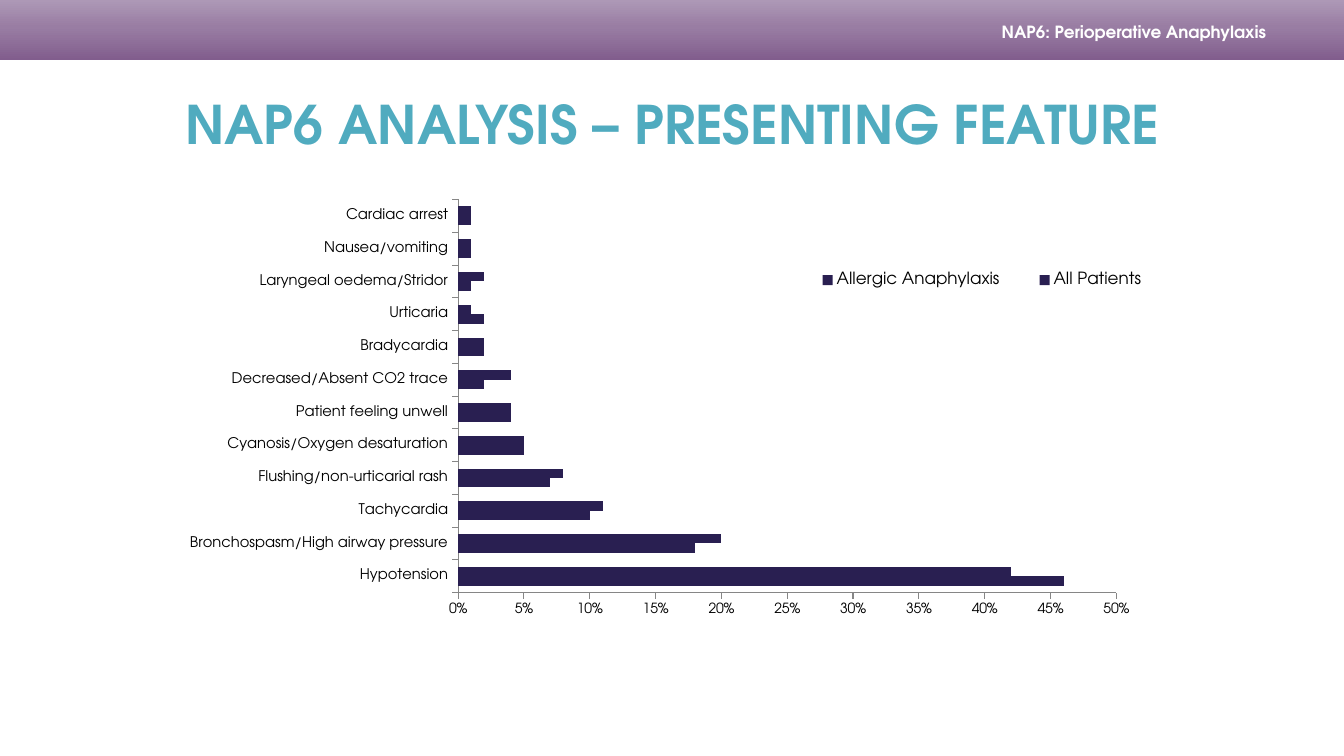
"""Build the NAP6 slide on the presenting features of anaphylaxis."""
from copy import deepcopy

from lxml import etree
from pptx import Presentation
from pptx.chart.data import CategoryChartData
from pptx.dml.color import RGBColor
from pptx.enum.chart import XL_CHART_TYPE, XL_LEGEND_POSITION, XL_TICK_MARK
from pptx.enum.shapes import MSO_SHAPE
from pptx.enum.text import MSO_ANCHOR, MSO_AUTO_SIZE, PP_ALIGN
from pptx.oxml.ns import qn
from pptx.util import Inches, Pt

BARS = XL_CHART_TYPE.BAR_CLUSTERED
SIDE = XL_LEGEND_POSITION.RIGHT
OUT, NONE = XL_TICK_MARK.OUTSIDE, XL_TICK_MARK.NONE
RECT = MSO_SHAPE.RECTANGLE
MID = MSO_ANCHOR.MIDDLE
FIXED = MSO_AUTO_SIZE.NONE
RIGHT, CENTER = PP_ALIGN.RIGHT, PP_ALIGN.CENTER

THEME = {
    "face": "TeX Gyre Adventor",
    "band": [(0, "815D8D"), (0.55, "997DA3"), (1, "AD98B6")],
    "bar": "291F51",
    "axis": "868686",
    "head": {"size": 12, "color": "FFFFFF", "bold": True},
    "title": {"size": 38, "color": "50ABBF", "bold": True},
    "chart": {"size": 10, "color": "000000", "bold": False},
    "label": {"size": 10.5, "color": "000000", "bold": False},
    "key": {"size": 12, "color": "000000", "bold": False},
}

ROWS = [
    ("Hypotension", 0.46, 0.42),
    ("Bronchospasm/High airway pressure", 0.18, 0.2),
    ("Tachycardia", 0.1, 0.11),
    ("Flushing/non-urticarial rash", 0.07, 0.08),
    ("Cyanosis/Oxygen desaturation", 0.05, 0.05),
    ("Patient feeling unwell", 0.04, 0.04),
    ("Decreased/Absent CO2 trace", 0.02, 0.04),
    ("Bradycardia", 0.02, 0.02),
    ("Urticaria", 0.02, 0.01),
    ("Laryngeal oedema/Stridor", 0.01, 0.02),
    ("Nausea/vomiting", 0.01, 0.01),
    ("Cardiac arrest", 0.01, 0.01),
]


def style(font, role):
    look = THEME[role]
    values = {"name": THEME["face"], "size": Pt(look["size"]), "bold": look["bold"]}
    for key, value in values.items():
        setattr(font, key, value)
    font.color.rgb = RGBColor.from_string(look["color"])


def place(part, index, marks):
    for old in part.findall(qn("c:layout")):
        part.remove(old)
    layout = etree.Element(qn("c:layout"))
    manual = etree.SubElement(layout, qn("c:manualLayout"))
    for tag, value in marks.items():
        etree.SubElement(manual, qn("c:" + tag)).set("val", str(value))
    part.insert(index, layout)


deck = Presentation()
deck.slide_width, deck.slide_height = Inches(13.33), Inches(7.5)
slide = deck.slides.add_slide(deck.slide_layouts[5])

band = slide.shapes.add_shape(RECT, 0, 0, deck.slide_width, Inches(0.6))
band.shadow.inherit = False
band.line.fill.background()
band.fill.gradient()
band.fill.gradient_angle = 90
first = next(band._element.iter(qn("a:gs")))
first.addnext(deepcopy(first))
for stop, (spot, color) in zip(band.fill.gradient_stops, THEME["band"]):
    stop.position = spot
    stop.color.rgb = RGBColor.from_string(color)

head = slide.shapes.add_textbox(Inches(8.35), Inches(0.18), Inches(4.45), Inches(0.28))
title = slide.shapes.title
title.left, title.top = Inches(0.67), Inches(0.6)
title.width, title.height = Inches(12), Inches(1.25)
for box, role, words, align in (
    (head, "head", "NAP6: Perioperative Anaphylaxis", RIGHT),
    (title, "title", "NAP6 ANALYSIS – PRESENTING FEATURE", CENTER),
):
    frame = box.text_frame
    frame.text = words
    for key, value in {"word_wrap": True, "auto_size": FIXED, "vertical_anchor": MID}.items():
        setattr(frame, key, value)
    frame.paragraphs[0].alignment = align
    style(frame.paragraphs[0].runs[0].font, role)
head.text_frame.margin_right = Inches(0.24)

names, every, proven = zip(*ROWS)
data = CategoryChartData(number_format="0%")
data.categories = names
data.add_series("All Patients", every)
data.add_series("Allergic Anaphylaxis", proven)
chart = slide.shapes.add_chart(
    BARS, Inches(0.62), Inches(1.85), Inches(12), Inches(4.32), data
).chart
style(chart.font, "chart")
chart.has_title = False

plot = chart.plots[0]
for key, value in {"gap_width": 150, "overlap": 0, "vary_by_categories": False}.items():
    setattr(plot, key, value)
for series in plot.series:
    series.format.fill.solid()
    series.format.fill.fore_color.rgb = RGBColor.from_string(THEME["bar"])

for axis, role in ((chart.category_axis, "label"), (chart.value_axis, "chart")):
    looks = {"has_major_gridlines": False, "major_tick_mark": OUT, "minor_tick_mark": NONE}
    for key, value in looks.items():
        setattr(axis, key, value)
    axis.format.line.color.rgb = RGBColor.from_string(THEME["axis"])
    axis.format.line.width = Pt(0.75)
    style(axis.tick_labels.font, role)
scale = {"minimum_scale": 0, "maximum_scale": 0.5, "major_unit": 0.05}
for key, value in scale.items():
    setattr(chart.value_axis, key, value)
ticks = chart.value_axis.tick_labels
ticks.number_format, ticks.number_format_is_linked = "0%", False

chart.has_legend = True
legend = chart.legend
legend.position, legend.include_in_layout = SIDE, False
style(legend.font, "key")

modes = {"xMode": "edge", "yMode": "edge"}
area = chart._chartSpace.chart.plotArea
place(area, 0, {"layoutTarget": "inner", **modes, "x": 0.327, "y": 0.03, "w": 0.544, "h": 0.903})
place(legend._element, 1, {**modes, "x": 0.6, "y": 0.17, "w": 0.32, "h": 0.09})

deck.save("out.pptx")
